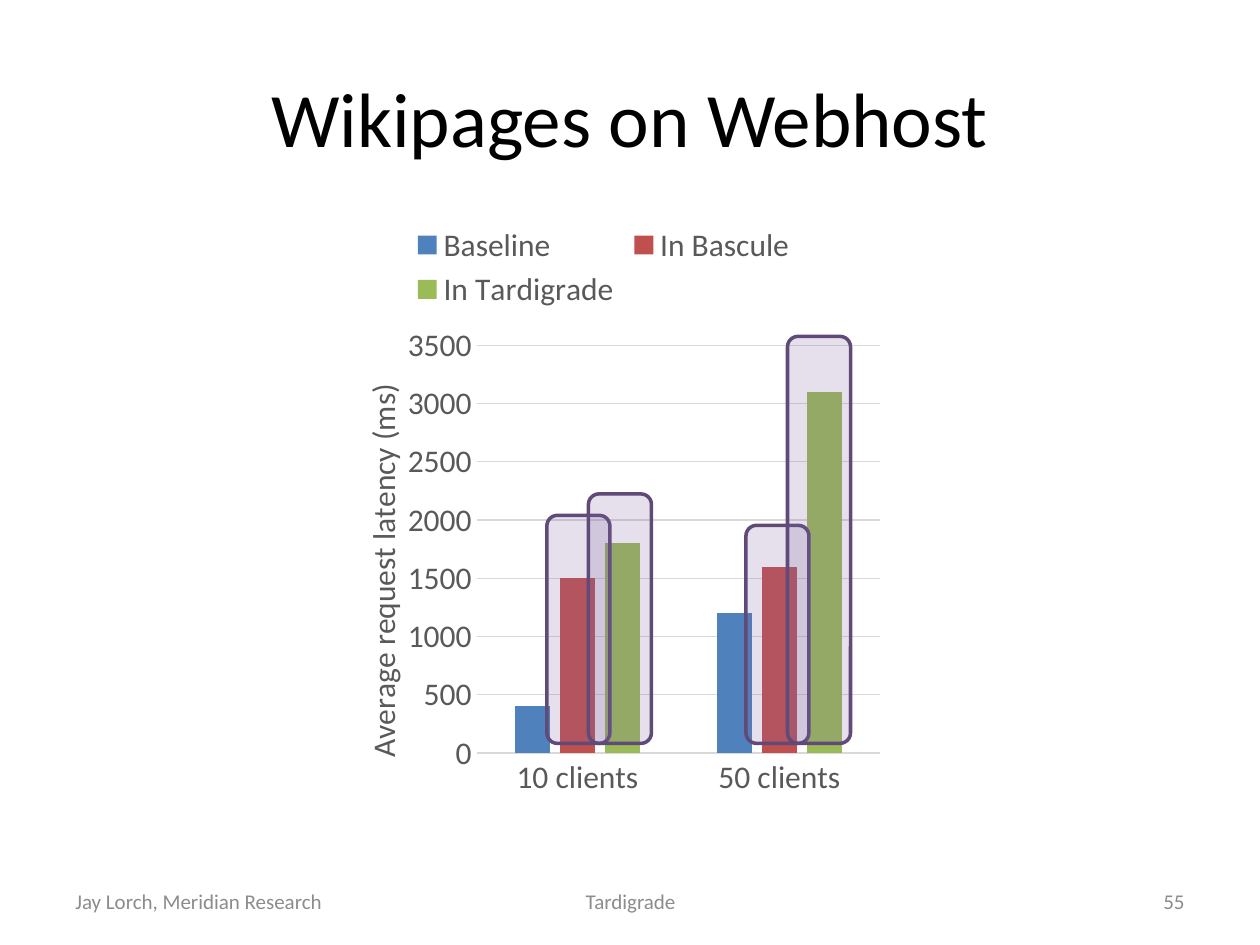
from pptx import Presentation
from pptx.chart.data import CategoryChartData
from pptx.dml.color import RGBColor
from pptx.enum.chart import XL_CHART_TYPE, XL_LEGEND_POSITION, XL_TICK_MARK
from pptx.enum.shapes import MSO_SHAPE
from pptx.enum.text import MSO_ANCHOR, PP_ALIGN
from pptx.oxml import parse_xml
from pptx.oxml.ns import nsdecls, qn
from pptx.util import Inches, Pt
from lxml import etree

rgb = RGBColor.from_string
FONT = "Calibri"
LABEL_GRAY = "595959"
GRID_GRAY = "D9D9D9"


def add_text(text, left, top, width, height, size=12, color="8C8C8C", align=PP_ALIGN.LEFT):
    frame = slide.shapes.add_textbox(
        Inches(left), Inches(top), Inches(width), Inches(height)).text_frame
    frame.word_wrap = True
    frame.vertical_anchor = MSO_ANCHOR.MIDDLE
    paragraph = frame.paragraphs[0]
    paragraph.alignment = align
    run = paragraph.add_run()
    run.text = text
    run.font.name, run.font.size = FONT, Pt(size)
    run.font.color.rgb = rgb(color)


def set_layout(parent, index, extra="", **fractions):
    """Fix a chart part's place, as fractions of the chart's size."""
    for old in parent.findall(qn("c:layout")):
        parent.remove(old)
    modes = '<c:xMode val="edge"/><c:yMode val="edge"/>'
    sizes = "".join(f'<c:{key} val="{value}"/>' for key, value in fractions.items())
    parent.insert(index, parse_xml(
        f'<c:layout {nsdecls("c")}><c:manualLayout>{extra}{modes}{sizes}'
        '</c:manualLayout></c:layout>'))


prs = Presentation()
prs.slide_width, prs.slide_height = Inches(10), Inches(7.5)
slide = prs.slides.add_slide(prs.slide_layouts[6])

add_text("Wikipages on Webhost", 0.5, 0.3, 9, 1.25, size=44, color="000000",
         align=PP_ALIGN.CENTER)
add_text("Jay Lorch, Meridian Research", 0.5, 6.95, 2.33, 0.4)
add_text("Tardigrade", 3.42, 6.95, 3.17, 0.4, align=PP_ALIGN.CENTER)
add_text("55", 7.17, 6.95, 2.33, 0.4, align=PP_ALIGN.RIGHT)

# Latency chart
systems = [
    ("Baseline", (400, 1200), "4F81BD"),
    ("In Bascule", (1500, 1600), "C0504D"),
    ("In Tardigrade", (1800, 3100), "9BBB59"),
]
latencies = CategoryChartData()
latencies.categories = ["10 clients", "50 clients"]
for system, values, _ in systems:
    latencies.add_series(system, values)
chart = slide.shapes.add_chart(
    XL_CHART_TYPE.COLUMN_CLUSTERED, Inches(2.5), Inches(1.67),
    Inches(4.58), Inches(4.76), latencies).chart
chart.has_title = False
chart.font.name, chart.font.size = FONT, Pt(18)
chart.font.color.rgb = rgb(LABEL_GRAY)
chart.has_legend = True
chart.legend.position = XL_LEGEND_POSITION.TOP
chart.legend.include_in_layout = False

bars = chart.plots[0]
bars.gap_width, bars.overlap, bars.vary_by_categories = 219, -27, False
for series, (_, _, color) in zip(bars.series, systems):
    series.format.fill.solid()
    series.format.fill.fore_color.rgb = rgb(color)

clients, latency = chart.category_axis, chart.value_axis
for axis in (clients, latency):
    axis.major_tick_mark = axis.minor_tick_mark = XL_TICK_MARK.NONE
latency.minimum_scale, latency.maximum_scale, latency.major_unit = 0, 3500, 500
latency.format.line.fill.background()
for line in (clients.format.line, latency.major_gridlines.format.line):
    line.color.rgb = rgb(GRID_GRAY)
    line.width = Pt(0.75)

latency_title = latency.axis_title.text_frame
latency_title.text = "Average request latency (ms)"
title_font = latency_title.paragraphs[0].runs[0].font
title_font.name, title_font.size, title_font.bold = FONT, Pt(18), False
title_font.color.rgb = rgb(LABEL_GRAY)
body = latency_title._txBody.find(qn("a:bodyPr"))
body.set("rot", "-5400000")
body.set("vert", "horz")

set_layout(chart._chartSpace.chart.plotArea, 0, '<c:layoutTarget val="inner"/>',
           x=0.28, y=0.225, w=0.7, h=0.68)
set_layout(latency.axis_title._element, 1, x=0.07, y=0.28)

# Highlights: turned upright, all standing on one line
HIGHLIGHT_BOTTOM, HIGHLIGHT_WIDTH = 5.9, 0.5
for center, height in [(4.59, 1.81), (4.92, 1.98), (6.17, 1.73), (6.5, 3.23)]:
    middle = HIGHLIGHT_BOTTOM - height / 2
    highlight = slide.shapes.add_shape(
        MSO_SHAPE.ROUNDED_RECTANGLE,
        Inches(center - height / 2), Inches(middle - HIGHLIGHT_WIDTH / 2),
        Inches(height), Inches(HIGHLIGHT_WIDTH))
    highlight.rotation = 90
    highlight.shadow.inherit = False
    highlight.fill.solid()
    highlight.fill.fore_color.rgb = rgb("8064A2")
    fill_color = highlight._element.spPr.find(qn("a:solidFill"))[0]
    etree.SubElement(fill_color, qn("a:alpha")).set("val", "20000")
    highlight.line.color.rgb = rgb("5F4A78")
    highlight.line.width = Pt(2)

prs.save("out.pptx")
